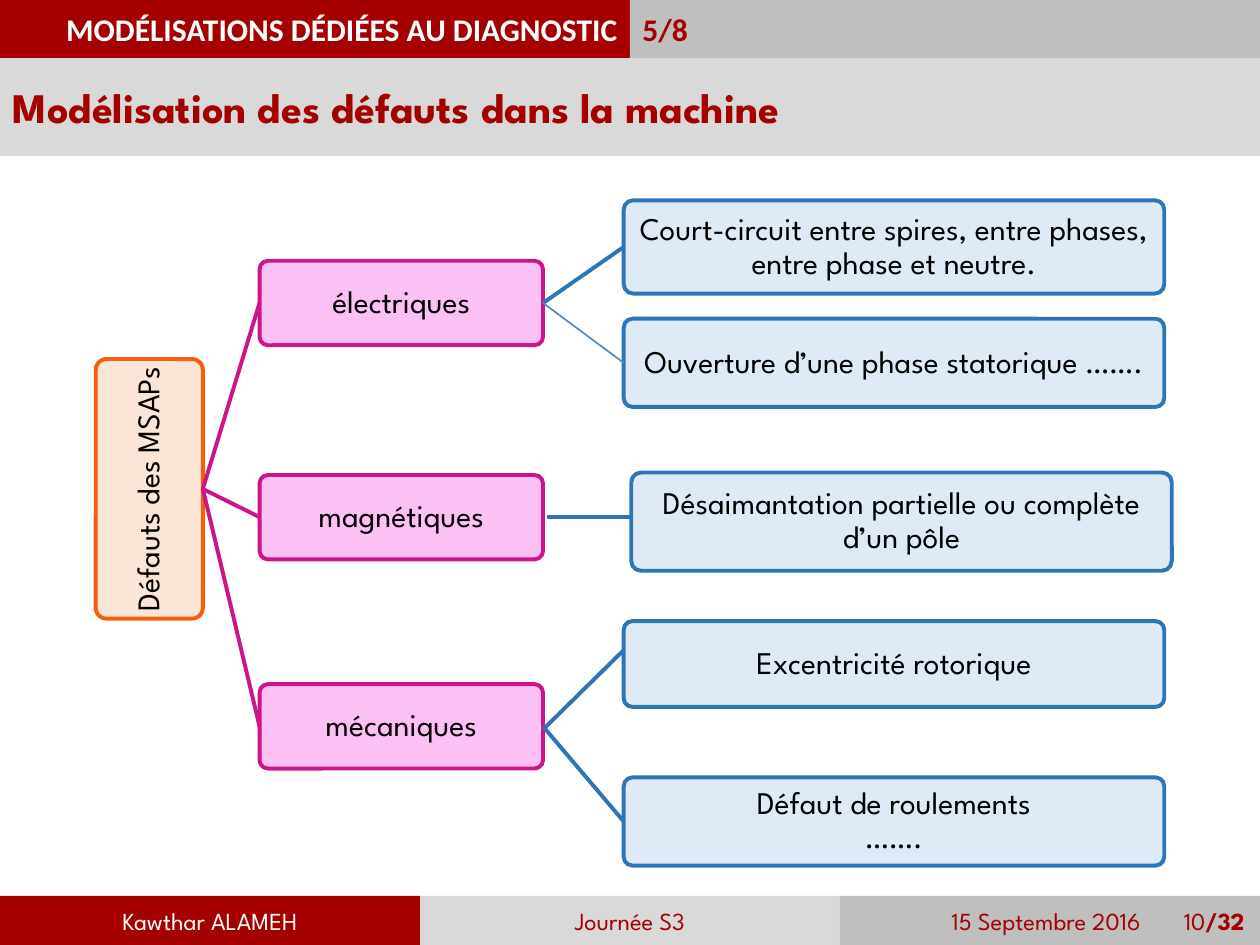
import pptx
import pptx.util
import pptx.dml.color
import pptx.enum.shapes
import pptx.enum.text
import pptx.oxml
import lxml.etree

Inches, Pt = pptx.util.Inches, pptx.util.Pt
RGB = pptx.dml.color.RGBColor
SHAPE = pptx.enum.shapes.MSO_SHAPE
ALIGN = pptx.enum.text.PP_ALIGN
MIDDLE = pptx.enum.text.MSO_ANCHOR.MIDDLE

RED = RGB(0xA4, 0x00, 0x00)
WHITE = RGB(0xFF, 0xFF, 0xFF)
BLACK = RGB(0x00, 0x00, 0x00)
GREY = RGB(0xBF, 0xBF, 0xBF)
PALE = RGB(0xD9, 0xD9, 0xD9)
ORANGE = RGB(0xF7, 0x5E, 0x09)
PEACH = RGB(0xFB, 0xE5, 0xD6)
MAGENTA = RGB(0xCD, 0x15, 0x8B)
PINK = RGB(0xFB, 0xC1, 0xF4)
BLUE = RGB(0x2E, 0x75, 0xB6)
SKY = RGB(0xDE, 0xEB, 0xF7)
THIN = RGB(0x53, 0x8D, 0xC1)
SPARTAN = "League Spartan"

deck = pptx.Presentation()
deck.slide_width, deck.slide_height = Inches(10), Inches(7.5)
slide = deck.slides.add_slide(deck.slide_layouts[5])
shapes = slide.shapes


def add_box(kind, place, fill, text, size, color, align, font=SPARTAN, bold=False):
    box = shapes.add_shape(kind, *[Inches(n) for n in place])
    box.shadow.inherit = False
    box.fill.solid()
    box.fill.fore_color.rgb = fill
    box.line.fill.background()
    frame = box.text_frame
    frame.word_wrap = True
    frame.vertical_anchor = MIDDLE
    frame.text = text
    for para in frame.paragraphs:
        para.alignment = align
        para.font.name, para.font.size = font, Pt(size)
        para.font.bold, para.font.color.rgb = bold, color
    return box


def add_line(start, end, color, width=2.25):
    # Each end is either a box with a side number or a plain point
    line = shapes.add_connector(pptx.enum.shapes.MSO_CONNECTOR.STRAIGHT, 0, 0, 0, 0)
    if isinstance(start[0], float):
        line.begin_x, line.begin_y = Inches(start[0]), Inches(start[1])
    else:
        line.begin_connect(*start)
    if isinstance(end[0], float):
        line.end_x, line.end_y = Inches(end[0]), Inches(end[1])
    else:
        line.end_connect(*end)
    line.line.color.rgb, line.line.width = color, Pt(width)
    lxml.etree.SubElement(line._element.spPr, pptx.oxml.ns.qn("a:effectLst"))


# Title band
title = shapes.title
title.left, title.top = Inches(0), Inches(0.45)
title.width, title.height = Inches(10), Inches(0.79)
title.fill.solid()
title.fill.fore_color.rgb = PALE
title.text_frame.text = "Modélisation des défauts dans la machine"
title.text_frame.vertical_anchor = MIDDLE
head = title.text_frame.paragraphs[0]
head.alignment = ALIGN.JUSTIFY
head.font.name, head.font.size = SPARTAN, Pt(24)
head.font.bold, head.font.color.rgb = True, RED

# Header
for left, fill, text, color, align in (
    (0, RED, "MODÉLISATIONS DÉDIÉES AU DIAGNOSTIC", WHITE, ALIGN.RIGHT),
    (5, GREY, "5/8", RED, ALIGN.LEFT),
):
    add_box(SHAPE.RECTANGLE, (left, 0, 5, 0.46), fill, text, 18, color, align, "Calibri", True)

# Footer
third = 10 / 3
for i, (fill, text, color, align) in enumerate((
    (RED, "Kawthar ALAMEH", WHITE, ALIGN.CENTER),
    (PALE, "Journée S3", RED, ALIGN.CENTER),
    (GREY, "\t15 Septembre 2016\t10", RED, ALIGN.LEFT),
)):
    foot = add_box(SHAPE.RECTANGLE, (i * third, 7.11, third, 0.39), fill, text, 14, color, align)

# Date and page number on tab stops
para = foot.text_frame.paragraphs[0]
total = para.add_run()
total.text = "/32"
total.font.bold = True
tabs = pptx.oxml.parse_xml(
    '<a:tabLst xmlns:a="http://schemas.openxmlformats.org/drawingml/2006/main">'
    f'<a:tab pos="{Inches(2.29)}" algn="r"/><a:tab pos="{Inches(2.63)}" algn="l"/></a:tabLst>')
para._p.pPr.insert(0, tabs)

# Boxes of the tree
nodes = {}
for name, place, fill, edge, text in (
    ("root", (0.76, 2.85, 0.85, 2.06), PEACH, ORANGE, "Défauts des MSAPs"),
    ("elec", (2.06, 2.07, 2.25, 0.67), PINK, MAGENTA, "électriques"),
    ("magn", (2.06, 3.77, 2.25, 0.67), PINK, MAGENTA, "magnétiques"),
    ("mech", (2.06, 5.43, 2.25, 0.67), PINK, MAGENTA, "mécaniques"),
    ("short", (4.95, 1.59, 4.29, 0.74), SKY, BLUE,
     "Court-circuit entre spires, entre phases, entre phase et neutre."),
    ("open", (4.95, 2.53, 4.29, 0.7), SKY, BLUE, "Ouverture d’une phase statorique ……."),
    ("pole", (5.01, 3.75, 4.29, 0.78), SKY, BLUE,
     "Désaimantation partielle ou complète d’un pôle"),
    ("rotor", (4.95, 4.93, 4.29, 0.68), SKY, BLUE, "Excentricité rotorique"),
    ("roll", (4.95, 6.17, 4.29, 0.7), SKY, BLUE, "Défaut de roulements\n……."),
):
    node = add_box(SHAPE.ROUNDED_RECTANGLE, place, fill, text, 18, BLACK, ALIGN.CENTER)
    node.adjustments[0] = 0.1
    node.line.color.rgb, node.line.width = edge, Pt(2.25)
    frame = node.text_frame
    frame.margin_left = frame.margin_right = Inches(0.03)
    frame.margin_top = frame.margin_bottom = Inches(0.03)
    for para in frame.paragraphs:
        para.line_spacing = 0.9
    nodes[name] = node
nodes["root"].text_frame._txBody.bodyPr.set("vert", "vert270")

# Branches
for name in ("elec", "magn", "mech"):
    add_line((nodes["root"], 3), (nodes[name], 1), MAGENTA)
for start, end, color, width in (
    ("elec", "short", BLUE, 2.25),
    ("elec", "open", THIN, 1),
    ("mech", "roll", BLUE, 2.25),
):
    add_line((nodes[start], 3), (nodes[end], 1), color, width)
add_line((4.34, 4.1), (5.01, 4.1), BLUE)
add_line((4.31, 5.79), (4.95, 5.16), BLUE)

deck.save("out.pptx")
